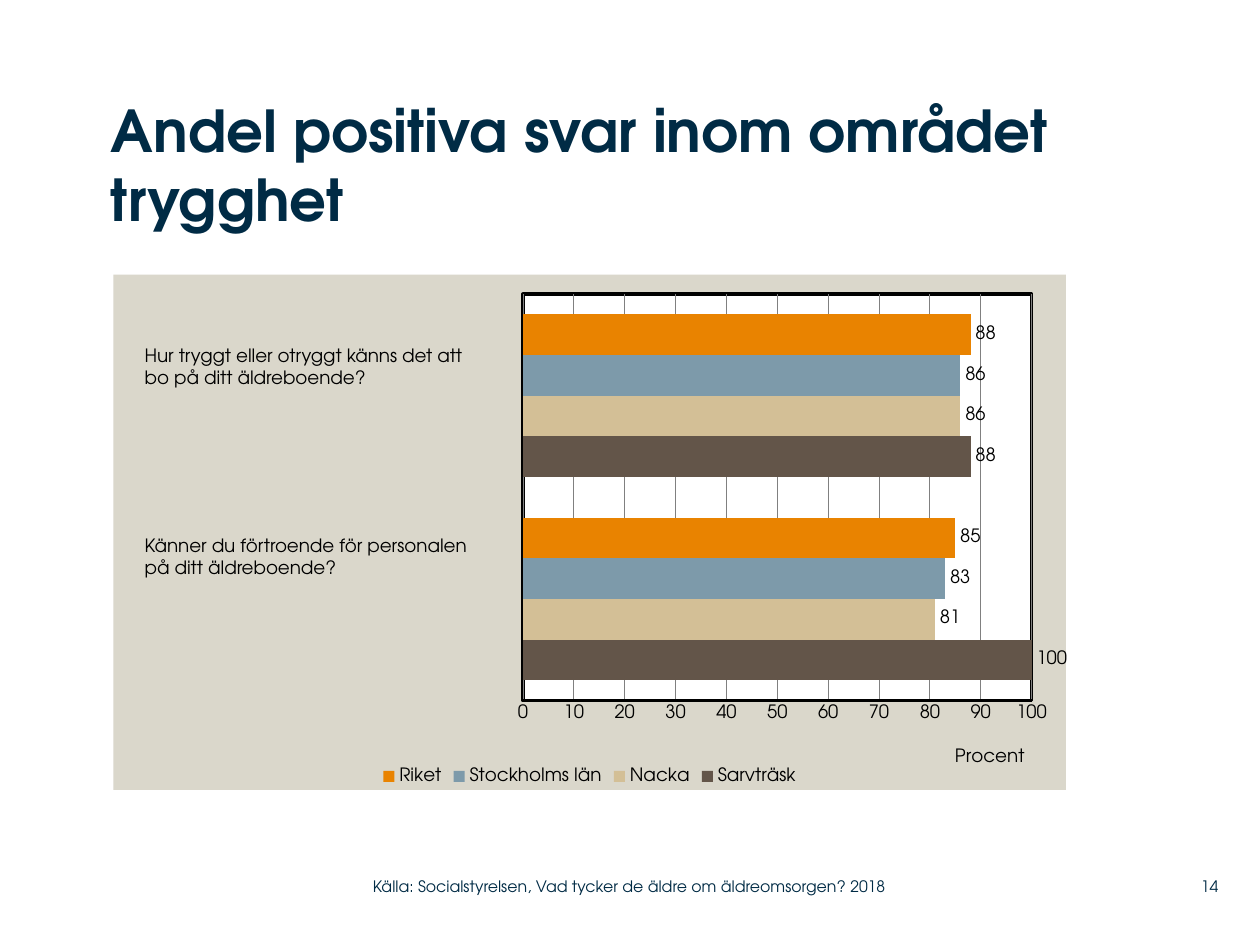
from lxml import etree
from pptx import Presentation
from pptx.chart.data import CategoryChartData
from pptx.dml.color import RGBColor
from pptx.enum.chart import XL_CHART_TYPE as CT, XL_LABEL_POSITION as LP
from pptx.enum.chart import XL_LEGEND_POSITION as LegendPos, XL_TICK_MARK as Tick
from pptx.enum.text import MSO_ANCHOR as Anchor, MSO_AUTO_SIZE as AutoSize, PP_ALIGN as Align
from pptx.oxml import parse_xml
from pptx.oxml.ns import nsdecls, qn
from pptx.util import Inches, Pt

# Content
FONT, NAVY, BLACK = "TeX Gyre Adventor", "002B45", "000000"
TITLE = "Andel positiva svar inom området trygghet"
CATEGORIES = ["1", "2"]
SERIES = [
    ("Sarvträsk", (100, 88), "635549"),
    ("Nacka", (81, 86), "D3BF96"),
    ("Stockholms län", (83, 86), "7D9AAA"),
    ("Riket", (85, 88), "E98300"),
]
QUESTION = dict(size=10.5, color=BLACK)
FOOTER = dict(size=9, color=NAVY, margin=0, anchor=Anchor.MIDDLE)
TEXTS = [
    ((1.05, 2.68, 2.94, 0.45),
     ["Hur tryggt eller otryggt känns det att bo på ditt äldreboende?"], QUESTION),
    ((1.05, 4.19, 2.94, 0.45),
     ["Känner du förtroende för personalen", "på ditt äldreboende?"], QUESTION),
    ((9.2, 6.89, 0.47, 0.29), ["14"], dict(FOOTER, align=Align.RIGHT)),
    ((2.96, 6.89, 4.43, 0.29),
     ["Källa: Socialstyrelsen, Vad tycker de äldre om äldreomsorgen? 2018"], FOOTER),
]


def rgb(value):
    return RGBColor.from_string(value)


def style_font(font, size, color, bold=False):
    for name, value in dict(name=FONT, size=Pt(size), bold=bold).items():
        setattr(font, name, value)
    font.color.rgb = rgb(color)


def fill_text(sp, lines, size, color, bold=False, margin=None,
              anchor=Anchor.TOP, align=Align.LEFT):
    tf = sp.text_frame
    for name, value in dict(word_wrap=True, auto_size=AutoSize.NONE,
                            vertical_anchor=anchor).items():
        setattr(tf, name, value)
    if margin is not None:
        for side in ("left", "top", "right", "bottom"):
            setattr(tf, f"margin_{side}", Inches(margin))
    tf.text = "\n".join(lines)
    for p in tf.paragraphs:
        p.alignment = align
        style_font(p.runs[0].font, size, color, bold)


def layout_xml(**values):
    items = "".join(f'<c:{k} val="{v}"/>' for k, v in values.items())
    return parse_xml(f'<c:layout {nsdecls("c")}><c:manualLayout>{items}'
                     '</c:manualLayout></c:layout>')


def area_format(fill, line):
    outline = (f'<a:ln w="{Pt(2)}"><a:solidFill><a:srgbClr val="{line}"/></a:solidFill></a:ln>'
               if line else '<a:ln><a:noFill/></a:ln>')
    return parse_xml(f'<c:spPr {nsdecls("c", "a")}><a:solidFill><a:srgbClr val="{fill}"/>'
                     f'</a:solidFill>{outline}</c:spPr>')


prs = Presentation()
prs.slide_width, prs.slide_height = Inches(10), Inches(7.5)
s = prs.slides.add_slide(prs.slide_layouts[5])

# Title
title = s.shapes.title
for name, value in dict(left=0.88, top=0.75, width=7.6, height=1.42).items():
    setattr(title, name, Inches(value))
fill_text(title, [TITLE], 33, NAVY, bold=True, margin=0)

# Bar chart
data = CategoryChartData()
data.categories = CATEGORIES
for name, values, _ in SERIES:
    data.add_series(name, values)
box = map(Inches, (0.9, 2.18, 7.57, 4.09))
chart = s.shapes.add_chart(CT.BAR_CLUSTERED, *box, data).chart
chart.has_title = False
style_font(chart.font, 10.5, BLACK)

plot = chart.plots[0]
plot.gap_width, plot.overlap, plot.vary_by_categories = 100, 0, False
for series, (_, _, color) in zip(plot.series, SERIES):
    series.format.fill.solid()
    series.format.fill.fore_color.rgb = rgb(color)
    labels = series.data_labels
    labels.show_value, labels.position = True, LP.OUTSIDE_END
    style_font(labels.font, 10.5, BLACK)

# Axes
chart.category_axis.visible = False
axis = chart.value_axis
for name, value in dict(minimum_scale=0, maximum_scale=100, major_unit=10,
                        major_tick_mark=Tick.NONE, minor_tick_mark=Tick.NONE,
                        has_major_gridlines=True).items():
    setattr(axis, name, value)
style_font(axis.tick_labels.font, 10.5, BLACK)
for line, color, width in ((axis.format.line, BLACK, 2),
                           (axis.major_gridlines.format.line, "808080", 0.5)):
    line.color.rgb, line.width = rgb(color), Pt(width)
axis.axis_title.text_frame.text = "Procent"
style_font(axis.axis_title.text_frame.paragraphs[0].runs[0].font, 10.5, BLACK)
axis_title = axis.axis_title._element
for old in axis_title.findall(qn("c:layout")):
    axis_title.remove(old)
axis_title.find(qn("c:tx")).addnext(layout_xml(xMode="edge", yMode="edge", x=0.88, y=0.91))

# Legend
chart.has_legend = True
chart.legend.position = LegendPos.BOTTOM
chart.legend.include_in_layout = False
style_font(chart.legend.font, 10.5, BLACK)

# Plot position and backgrounds
area = chart._chartSpace.chart.plotArea
for old in area.findall(qn("c:layout")):
    area.remove(old)
area.insert(0, layout_xml(layoutTarget="inner", xMode="edge", yMode="edge",
                          x=0.43, y=0.038, w=0.534, h=0.789))
area.append(area_format("FFFFFF", BLACK))
chart._chartSpace.chart.addnext(area_format("DAD7CB", None))

# Questions, page number and source
for at, lines, style in TEXTS:
    fill_text(s.shapes.add_textbox(*map(Inches, at)), lines, **style)

prs.save("out.pptx")
